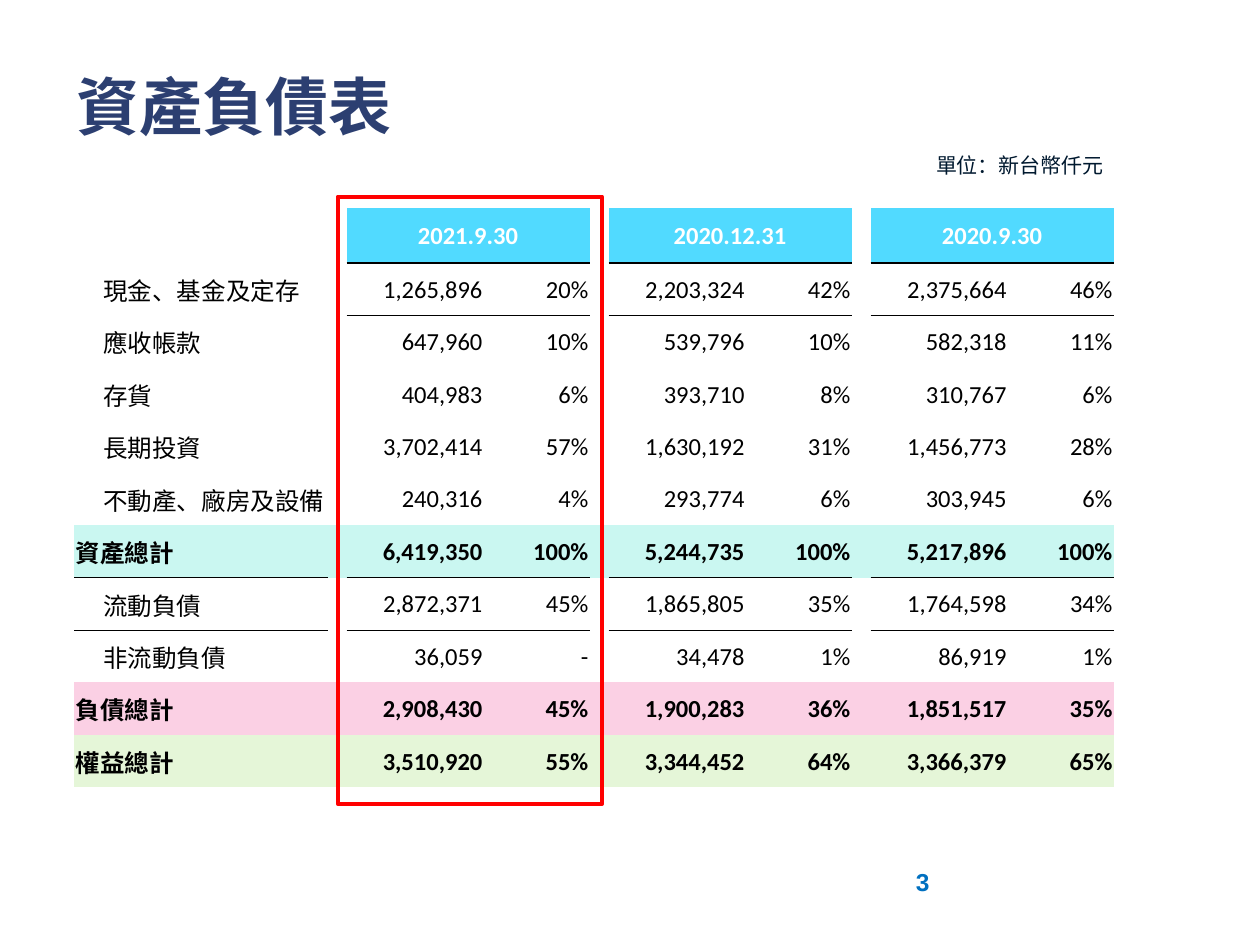
from lxml.etree import SubElement
from pptx import Presentation
from pptx.dml.color import RGBColor
from pptx.enum.shapes import MSO_SHAPE
from pptx.enum.text import MSO_ANCHOR as Anchor, PP_ALIGN as Align
from pptx.oxml import parse_xml
from pptx.oxml.ns import nsdecls, qn
from pptx.util import Inches, Pt

WIDTH, HEIGHT = Inches(10), Inches(7.5)
NO_STYLE = "{2D5ABB26-0587-4C30-8999-92F81FD0307C}"
HEADER_FILL = "51DAFF"
DATES = ["2021.9.30", "2020.12.31", "2020.9.30"]
LABEL_WIDTH, GAP_WIDTH, AMOUNT_WIDTH, SHARE_WIDTH = 2.01, 0.15, 1.14, 0.79
COLUMN_WEIGHTS = [LABEL_WIDTH] + [GAP_WIDTH, AMOUNT_WIDTH, SHARE_WIDTH] * len(DATES)
HEADER_WEIGHT = 1.05  # relative to a body row
TOTAL_FILLS = {"資產總計": "CAF7F1", "負債總計": "FBD0E4", "權益總計": "E5F6D8"}
RULED_TOTAL = "資產總計"
BALANCES = [
    ("現金、基金及定存", "1,265,896", "20%", "2,203,324", "42%", "2,375,664", "46%"),
    ("應收帳款", "647,960", "10%", "539,796", "10%", "582,318", "11%"),
    ("存貨", "404,983", "6%", "393,710", "8%", "310,767", "6%"),
    ("長期投資", "3,702,414", "57%", "1,630,192", "31%", "1,456,773", "28%"),
    ("不動產、廠房及設備", "240,316", "4%", "293,774", "6%", "303,945", "6%"),
    ("資產總計", "6,419,350", "100%", "5,244,735", "100%", "5,217,896", "100%"),
    ("流動負債", "2,872,371", "45%", "1,865,805", "35%", "1,764,598", "34%"),
    ("非流動負債", "36,059", "-", "34,478", "1%", "86,919", "1%"),
    ("負債總計", "2,908,430", "45%", "1,900,283", "36%", "1,851,517", "35%"),
    ("權益總計", "3,510,920", "55%", "3,344,452", "64%", "3,366,379", "65%"),
]


def color(value):
    return RGBColor.from_string(value)


def box(left, top, width, height):
    """Turn percentages of the slide's size into lengths."""
    return (int(WIDTH * left / 100), int(HEIGHT * top / 100),
            int(WIDTH * width / 100), int(HEIGHT * height / 100))


def style(paragraph, size, hex_color, bold=False, align=Align.LEFT, name="Arial"):
    paragraph.alignment = align
    font = paragraph.font
    font.name, font.size, font.bold = name, Pt(size), bold
    font.color.rgb = color(hex_color)


def add_title(slide, area, text):
    title = slide.shapes.title
    title.left, title.top, title.width, title.height = area
    title.text_frame.text = text
    title.text_frame.vertical_anchor = Anchor.MIDDLE
    style(title.text_frame.paragraphs[0], 36, "2C3F71", bold=True)


def add_label(slide, area, text, **look):
    frame = slide.shapes.add_textbox(*area).text_frame
    frame.word_wrap = True
    frame.text = text
    style(frame.paragraphs[0], **look)


def rule(cell, edge, points):
    """Draw a black border; edge is "T" or "B"."""
    line = parse_xml(
        f'<a:ln{edge} {nsdecls("a")} w="{Pt(points)}"><a:solidFill>'
        f'<a:srgbClr val="000000"/></a:solidFill></a:ln{edge}>')
    cell._tc.get_or_add_tcPr().insert(0, line)


def fill_cell(cell, text, fill=None, indent=0.01, right=0.01, **look):
    cell.margin_left, cell.margin_right = Inches(indent), Inches(right)
    cell.margin_top, cell.margin_bottom = Inches(0.01), 0
    cell.vertical_anchor = Anchor.MIDDLE
    if fill:
        cell.fill.solid()
        cell.fill.fore_color.rgb = color(fill)
    else:
        cell.fill.background()
    cell.text = text
    style(cell.text_frame.paragraphs[0], size=14, name="Calibri", **look)


def create_table(slide, area):
    """Add an unstyled table with weighted columns and rows."""
    table = slide.shapes.add_table(len(BALANCES) + 1, len(COLUMN_WEIGHTS), *area).table
    table.first_row = table.horz_banding = False
    properties = table._tbl.tblPr
    for style_id in properties.findall(qn("a:tableStyleId")):
        properties.remove(style_id)
    SubElement(properties, qn("a:tableStyleId")).text = NO_STYLE
    for column, weight in zip(table.columns, COLUMN_WEIGHTS):
        column.width = int(area[2] * weight / sum(COLUMN_WEIGHTS))
    row_height = area[3] / (len(BALANCES) + HEADER_WEIGHT)
    for index, row in enumerate(table.rows):
        row.height = int(row_height * (1 if index else HEADER_WEIGHT))
    return table


def fill_header(table):
    for column in range(len(COLUMN_WEIGHTS)):
        period, part = divmod(column - 1, 3)
        cell = table.cell(0, column)
        titled = column > 0 and part > 0
        fill_cell(cell, DATES[period] if titled and part == 1 else "",
                  HEADER_FILL if titled else None,
                  hex_color="FFFFFF", bold=True, align=Align.CENTER)
        if titled:
            rule(cell, "B", 1)
            rule(table.cell(1, column), "T", 1)
            if part == 2:
                table.cell(0, column - 1).merge(cell)


def fill_balance_row(table, row, balance):
    label, *figures = balance
    fill = TOTAL_FILLS.get(label)
    look = {"fill": fill, "hex_color": "000000", "bold": bool(fill)}
    fill_cell(table.cell(row, 0), label, indent=0.01 if fill else 0.23, **look)
    for period in range(len(DATES)):
        first = 1 + 3 * period
        amount, share = figures[2 * period:2 * period + 2]
        fill_cell(table.cell(row, first), "", **look)
        fill_cell(table.cell(row, first + 1), amount, right=0.06, align=Align.RIGHT, **look)
        fill_cell(table.cell(row, first + 2), share, align=Align.RIGHT, **look)
    if label == RULED_TOTAL:
        for column, weight in enumerate(COLUMN_WEIGHTS):
            if weight != GAP_WIDTH:
                rule(table.cell(row, column), "B", 0.5)
                rule(table.cell(row + 1, column), "T", 0.5)


def add_balance_sheet(slide, area):
    table = create_table(slide, area)
    fill_header(table)
    for row, balance in enumerate(BALANCES, start=1):
        fill_balance_row(table, row, balance)


def add_highlight(slide, area):
    frame = slide.shapes.add_shape(MSO_SHAPE.RECTANGLE, *area)
    frame.shadow.inherit = False
    frame.fill.background()
    frame.line.color.rgb = color("FF0000")
    frame.line.width = Pt(2.25)


def main():
    presentation = Presentation()
    presentation.slide_width, presentation.slide_height = WIDTH, HEIGHT
    slide = presentation.slides.add_slide(presentation.slide_layouts[5])
    add_label(slide, box(71.7, 91.07, 23.3, 6.93), "3",
              size=14, hex_color="0070C0", bold=True)
    add_title(slide, box(5.1, 2.8, 85.8, 16.67), "資產負債表")
    add_label(slide, box(65.7, 15.47, 22.9, 4), "單位：新台幣仟元",
              size=12, hex_color="00192F", align=Align.RIGHT)
    add_balance_sheet(slide, box(5.9, 22, 82.5, 61.33))
    add_highlight(slide, box(26.8, 20.8, 21, 64.27))
    presentation.save("out.pptx")


if __name__ == "__main__":
    main()
